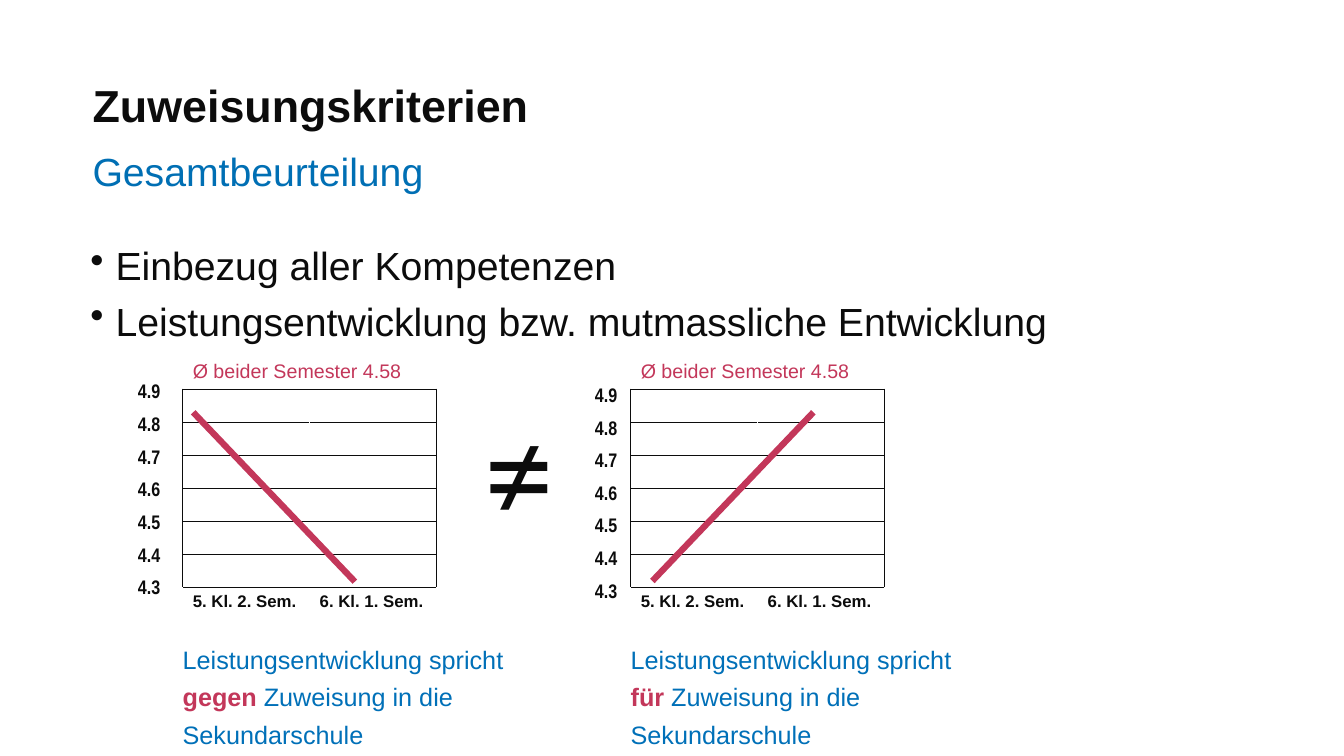
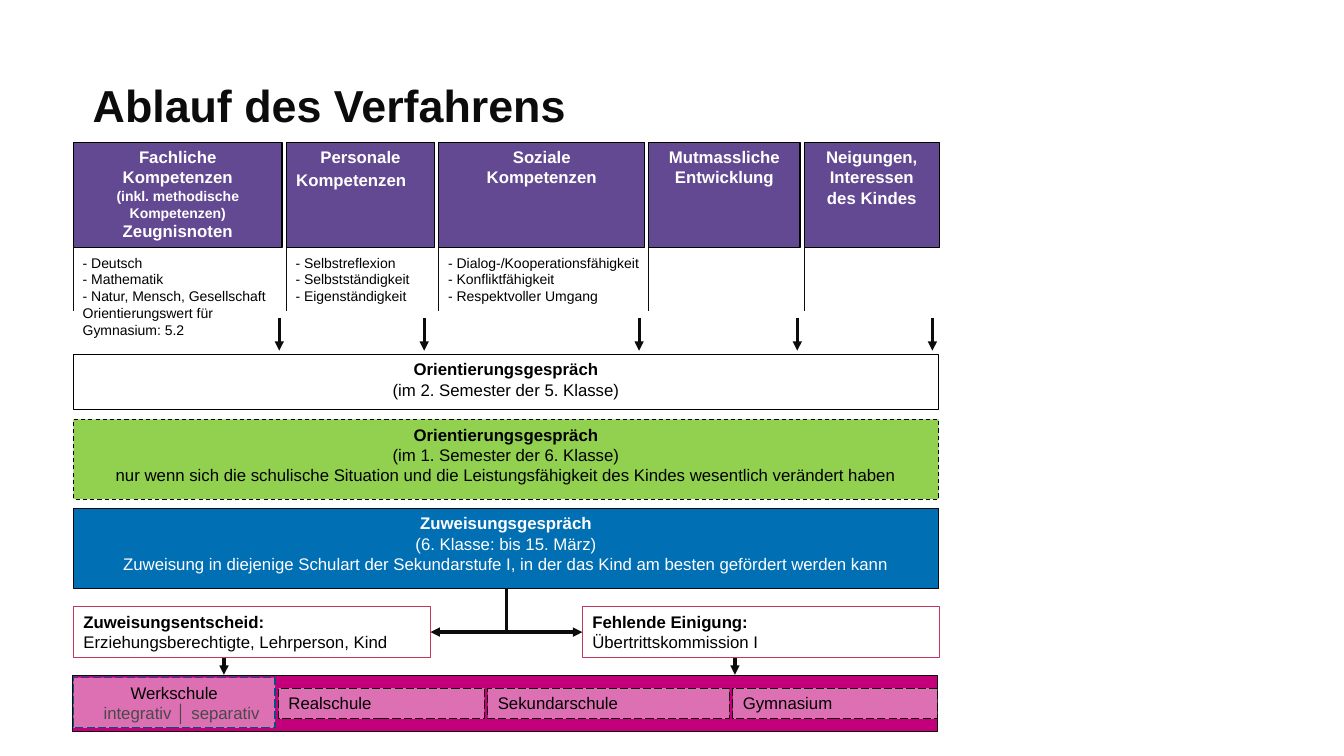
import pptx
import pptx.dml.color
import pptx.enum.dml
import pptx.enum.shapes
import pptx.enum.text
import pptx.oxml.ns
import pptx.util
from lxml import etree

Pt = pptx.util.Pt
RGB = pptx.dml.color.RGBColor.from_string
ALIGN = pptx.enum.text.PP_ALIGN
ANCHOR = pptx.enum.text.MSO_ANCHOR
DASH = pptx.enum.dml.MSO_LINE
qn = pptx.oxml.ns.qn

COLORS = {
    "ink": "0C0C0C", "black": "000000", "white": "FFFFFF", "grey": "494949",
    "blue": "006FB4", "caption": "0070B8", "navy": "005387", "red": "C3375A",
    "purple": "634992", "green": "92D050", "magenta": "C30079",
}
FONT = "Arial"


def add_text(slide, box, lines, size=12, color="black", bold=0, align=ALIGN.LEFT,
             font=FONT, anchor=ANCHOR.TOP, inset=None, fill=None, opacity=None,
             edge=None, edge_width=0.75, dash=None):
    """Text in a plain box, or in a rectangle if it has an edge; bold counts the leading bold lines."""
    box = [Pt(length) for length in box]
    if edge:
        shape = slide.shapes.add_shape(pptx.enum.shapes.MSO_SHAPE.RECTANGLE, *box)
        shape.shadow.inherit = False
        shape.line.color.rgb = RGB(COLORS[edge])
        shape.line.width = Pt(edge_width)
        if dash:
            shape.line.dash_style = dash
        if fill:
            shape.fill.solid()
            shape.fill.fore_color.rgb = RGB(COLORS[fill])
        else:
            shape.fill.background()
        if opacity:
            tint = shape.element.spPr.find(qn("a:solidFill"))[0]
            etree.SubElement(tint, qn("a:alpha"), val=str(opacity * 1000))
    else:
        shape = slide.shapes.add_textbox(*box)
    frame = shape.text_frame
    frame.word_wrap = True
    frame.vertical_anchor = anchor
    if inset is not None:
        frame.margin_left = frame.margin_right = Pt(inset)
        frame.margin_top = frame.margin_bottom = Pt(inset)
    frame.text = "\n".join(lines)
    for number, paragraph in enumerate(frame.paragraphs):
        paragraph.alignment = align
        for run in paragraph.runs:
            run.font.name = font
            run.font.size = Pt(size)
            run.font.bold = number < bold
            run.font.color.rgb = RGB(COLORS[color])
    return frame


def add_line(slide, start, end, color="ink", width=2.25, heads=()):
    """Straight line; heads names the ends with an arrowhead."""
    line = slide.shapes.add_connector(pptx.enum.shapes.MSO_CONNECTOR.STRAIGHT,
                                      *[Pt(length) for length in (*start, *end)])
    line.line.color.rgb = RGB(COLORS[color])
    line.line.width = Pt(width)
    properties = line.element.spPr
    for head in heads:
        etree.SubElement(properties.find(qn("a:ln")), qn(f"a:{head}"), type="triangle")
    etree.SubElement(properties, qn("a:effectLst"))


presentation = pptx.Presentation()
presentation.slide_width = Pt(960)
presentation.slide_height = Pt(540)

# Slides with their shared title style
slides = []
for heading in ("Zuweisungskriterien", "Ablauf des Verfahrens"):
    slide = presentation.slides.add_slide(presentation.slide_layouts[5])
    title = slide.shapes.title
    title.left, title.top, title.width, title.height = Pt(59), Pt(56), Pt(846), Pt(42.5)
    title.text_frame.text = heading
    title.text_frame.vertical_anchor = ANCHOR.MIDDLE
    paragraph = title.text_frame.paragraphs[0]
    paragraph.alignment = ALIGN.LEFT
    paragraph.line_spacing = 0.9
    font = paragraph.runs[0].font
    font.name, font.size, font.bold = FONT, Pt(32), True
    font.color.rgb = RGB(COLORS["ink"])
    slides.append(slide)
criteria, procedure = slides

# Criteria: subtitle and bullets
subtitle = add_text(criteria, (59, 103, 846, 42.5), ["Gesamtbeurteilung"], 28, "blue",
                    anchor=ANCHOR.MIDDLE)
subtitle.paragraphs[0].line_spacing = 0.9
bullets = add_text(criteria, (57.5, 169, 847, 96.5),
                   ["Einbezug aller Kompetenzen",
                    "Leistungsentwicklung bzw. mutmassliche Entwicklung"], 28, "ink")
for paragraph in bullets.paragraphs:
    paragraph.space_after = Pt(6)
    indents = paragraph._p.get_or_add_pPr()
    indents.set("marL", str(Pt(18)))
    indents.set("indent", str(-Pt(18)))
    etree.SubElement(indents, qn("a:buChar"), char="•")

# Criteria: unequal sign between the two developments
unequal = add_text(criteria, (323.5, 322, 95, 115), ["≠"], 100, "ink", align=ALIGN.CENTER,
                   font="Calibri", anchor=ANCHOR.MIDDLE, inset=0)
unequal.paragraphs[0].line_spacing = Pt(27)

# Criteria: grade grids with scale, trend and caption
GRID_TOP, ROW_HEIGHT, COLUMN_WIDTH, ROWS = 254, 23.6, 90.7, 8
developments = [
    # grid left, scale left, scale top, trend start, trend end, verdict
    (130.5, 92, 271, (138, 294.5), (253.5, 415.5), "gegen"),
    (450.5, 418.5, 273.5, (466, 415), (581, 294.5), "für"),
]
for left, scale_left, scale_top, trend_start, trend_end, verdict in developments:
    grid = criteria.shapes.add_table(ROWS, 2, Pt(left), Pt(GRID_TOP), Pt(2 * COLUMN_WIDTH),
                                     Pt(ROWS * ROW_HEIGHT)).table
    grid.first_row = grid.horz_banding = False
    for column in grid.columns:
        column.width = Pt(COLUMN_WIDTH)
    for row in grid.rows:
        row.height = Pt(ROW_HEIGHT)
    for row in (0, 1):
        grid.cell(row, 0).merge(grid.cell(row, 1))
    labels = {(0, 0): ("Ø beider Semester 4.58", 14, "red"),
              (ROWS - 1, 0): ("5. Kl. 2. Sem.", 12, "ink"),
              (ROWS - 1, 1): ("6. Kl. 1. Sem.", 12, "ink")}
    for row in range(ROWS):
        for column in range(2):
            cell = grid.cell(row, column)
            inside = 0 < row < ROWS - 1
            ruled = {"lnL": inside and column == 0,
                     "lnR": inside and (column == 1 or row == 1),
                     "lnT": row > 0,
                     "lnB": row < ROWS - 1}
            for side, dark in ruled.items():
                border = etree.SubElement(cell._tc.get_or_add_tcPr(), qn(f"a:{side}"),
                                          w=str(Pt(1)))
                paint = etree.SubElement(border, qn("a:solidFill"))
                etree.SubElement(paint, qn("a:srgbClr"), val=COLORS["ink" if dark else "white"])
            cell.fill.solid()
            cell.fill.fore_color.rgb = RGB(COLORS["white"])
            if (row, column) not in labels:
                cell.margin_top = cell.margin_bottom = 0
                continue
            label, size, color = labels[row, column]
            cell.text_frame.text = label
            font = cell.text_frame.paragraphs[0].runs[0].font
            font.name, font.size, font.bold = FONT, Pt(size), row > 0
            font.color.rgb = RGB(COLORS[color])

    for step in range(7):
        add_text(criteria, (scale_left, scale_top + step * 23.3, 22.5, 17),
                 [f"{4.9 - step / 10:.1f}"], 14, "ink", bold=1, align=ALIGN.RIGHT,
                 font="Arial Narrow", inset=0)
    add_line(criteria, trend_start, trend_end, "red", 4.5)

    caption = add_text(criteria, (left, 454.5, 255, 61), ["Leistungsentwicklung spricht "],
                       18, "caption", inset=0).paragraphs[0]
    caption.line_spacing = Pt(27)
    for words, color in ((verdict, "red"), (" Zuweisung in die Sekundarschule", "caption")):
        run = caption.add_run()
        run.text = words
        run.font.name, run.font.size, run.font.bold = FONT, Pt(18), color == "red"
        run.font.color.rgb = RGB(COLORS[color])

# Procedure: competence columns
LEFT, WIDTH, COLUMN_TOP, COLUMN_HEIGHT = 52.5, 618, 101.5, 75
competences = [
    # width, arrow position, heading, skills
    (149, 199.5, ["Fachliche Kompetenzen", "(inkl. methodische Kompetenzen)", "Zeugnisnoten"],
     ["- Deutsch", "- Mathematik", "- Natur, Mensch, Gesellschaft",
      "Orientierungswert für Gymnasium: 5.2"]),
    (106, 303, ["Personale Kompetenzen"],
     ["- Selbstreflexion", "- Selbstständigkeit", "- Eigenständigkeit"]),
    (147, 456.5, ["Soziale", "Kompetenzen"],
     ["- Dialog-/Kooperationsfähigkeit", "- Konfliktfähigkeit", "- Respektvoller Umgang"]),
    (108, 569.5, ["Mutmassliche", "Entwicklung"], []),
    (96.5, 666, ["Neigungen, Interessen", "des Kindes"], []),
]
left = LEFT
headings = []
for width, arrow, heading, skills in competences:
    headings.append(add_text(procedure, (left, COLUMN_TOP, width, COLUMN_HEIGHT), heading,
                             color="white", bold=len(heading), align=ALIGN.CENTER,
                             fill="purple", edge="black"))
    if skills:
        add_text(procedure, (left - 0.5, 178, width + 12, 60), skills, 10)
    add_line(procedure, (left, COLUMN_TOP + COLUMN_HEIGHT), (left, 222), width=0.75)
    add_line(procedure, (arrow, 227), (arrow, 250.5), heads=["tailEnd"])
    left += width + 3
headings[0].paragraphs[1].runs[0].font.size = Pt(10)
tab = headings[1].paragraphs[0].add_run()
tab.text = "\t"
tab.font.size = Pt(14)

# Procedure: the three talks
talks = [
    (253, 39.5, "black", dict(fill="white", opacity=71, edge="black"),
     ["Orientierungsgespräch", "(im 2. Semester der 5. Klasse)"]),
    (299.5, 57, "black", dict(fill="green", edge="black", dash=DASH.DASH),
     ["Orientierungsgespräch", "(im 1. Semester der 6. Klasse)",
      "nur wenn sich die schulische Situation und die Leistungsfähigkeit des Kindes "
      "wesentlich verändert haben"]),
    (363, 57, "white", dict(fill="blue", edge="ink", edge_width=0.5),
     ["Zuweisungsgespräch", "(6. Klasse: bis 15. März)",
      "Zuweisung in diejenige Schulart der Sekundarstufe I, in der das Kind am besten "
      "gefördert werden kann"]),
]
for top, height, color, look, lines in talks:
    add_text(procedure, (LEFT, top, WIDTH, height), lines, color=color, bold=1,
             align=ALIGN.CENTER, **look)

# Procedure: decision or missing agreement
outcomes = [
    (LEFT, 160, ["Zuweisungsentscheid:", "Erziehungsberechtigte, Lehrperson, Kind"]),
    (416, 525, ["Fehlende Einigung:", "Übertrittskommission I"]),
]
for left, arrow, lines in outcomes:
    add_text(procedure, (left, 433.5, 255, 36.5), lines, bold=1, edge="red")
    add_line(procedure, (arrow, 470), (arrow, 482), heads=["tailEnd"])
add_line(procedure, (362, 420), (362, 452))
add_line(procedure, (LEFT + 255, 451.5), (416, 451.5), heads=["headEnd", "tailEnd"])

# Procedure: school types on their band
add_text(procedure, (52, 482.5, WIDTH, 40), [], fill="magenta", edge="ink")
schools = [
    (144, 484, 36, "navy", ["Werkschule", "integrativ │ separativ"]),
    (147, 491.5, 22, "ink", ["Realschule"]),
    (172.5, 491.5, 22, "ink", ["Sekundarschule"]),
    (146, 491.5, 22, "ink", ["Gymnasium"]),
]
left = LEFT
frames = []
for width, top, height, edge, lines in schools:
    frames.append(add_text(procedure, (left, top, width, height), lines, fill="white",
                           opacity=44, edge=edge, dash=DASH.LONG_DASH))
    left += width + 2.5
name, variants = frames[0].paragraphs
name.alignment = ALIGN.CENTER
variants._p.get_or_add_pPr().set("marL", str(Pt(14.4)))
variants.runs[0].font.color.rgb = RGB(COLORS["grey"])

presentation.save("out.pptx")
